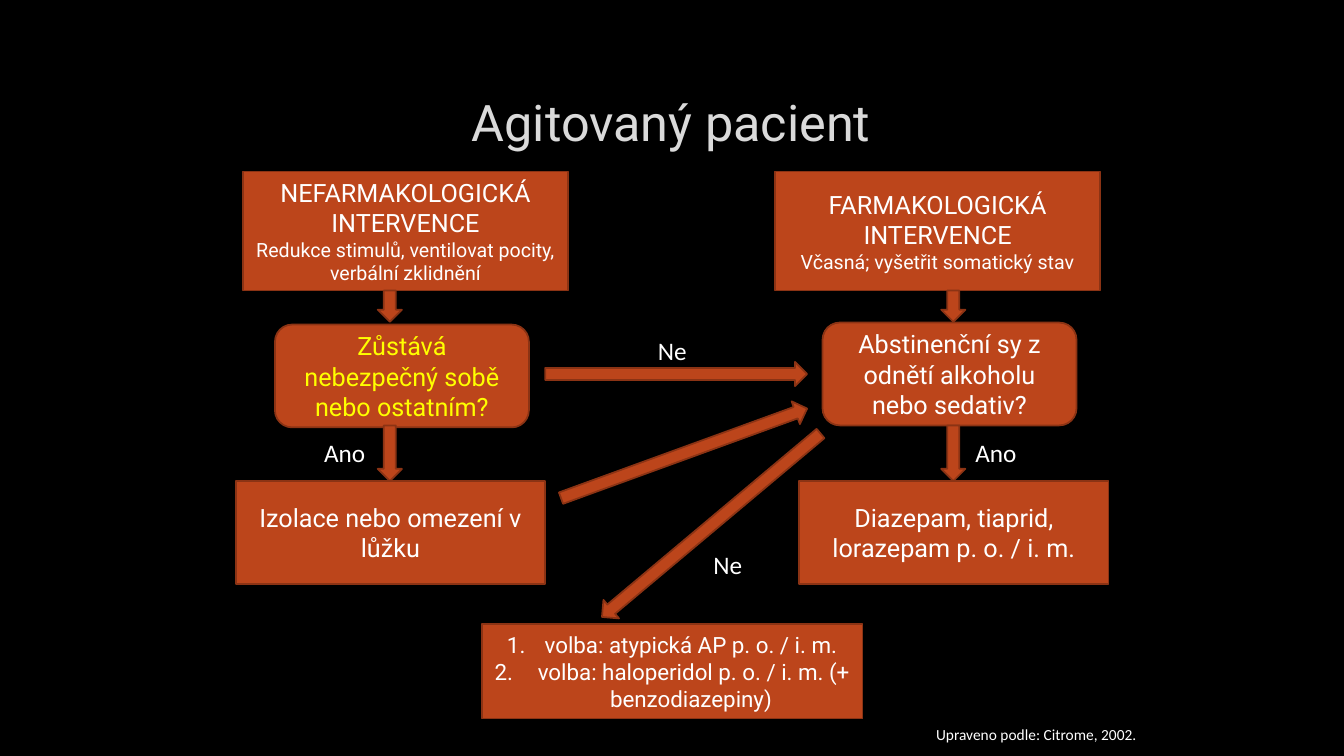
from lxml.etree import SubElement
from pptx import Presentation
from pptx.dml.color import RGBColor
from pptx.enum.shapes import MSO_SHAPE
from pptx.enum.text import MSO_ANCHOR, PP_ALIGN
from pptx.oxml import parse_xml
from pptx.oxml.ns import nsdecls, qn
from pptx.util import Cm, Pt

HUES = {
    "back": "000000",
    "fill": "BC451B",
    "edge": "8B3314",
    "text": "FFFFFF",
    "alert": "FFFF00",
    "title": "DADADA",
    "rim": "404040",
}
THICK = 0.61


def hue(name):
    """Return the named colour."""
    return RGBColor.from_string(HUES[name])


def write(para, text, size, tint="text", face="Roboto"):
    """Add one formatted run to a paragraph."""
    run = para.add_run()
    run.text = text
    run.font.size = Pt(size)
    run.font.name = face
    run.font.color.rgb = hue(tint)
    return run


def shape(slide, kind, box, turn=0):
    """Add a filled, outlined shape in a box given in centimetres."""
    form = slide.shapes.add_shape(kind, *map(Cm, box))
    form.shadow.inherit = False
    form.fill.solid()
    form.fill.fore_color.rgb = hue("fill")
    form.line.color.rgb = hue("edge")
    form.line.width = Pt(1.25)
    form.rotation = turn
    return form


def panel(slide, box, lines, kind=MSO_SHAPE.RECTANGLE, tint="text"):
    """Add a shape with centred lines of text and size."""
    frame = shape(slide, kind, box).text_frame
    frame.word_wrap = True
    frame.vertical_anchor = MSO_ANCHOR.MIDDLE
    for i, (text, size) in enumerate(lines):
        para = frame.add_paragraph() if i else frame.paragraphs[0]
        para.alignment = PP_ALIGN.CENTER
        write(para, text, size, tint)
    return frame


def label(slide, box, text, size=18):
    """Add a plain text label."""
    frame = slide.shapes.add_textbox(*map(Cm, box)).text_frame
    frame.word_wrap = True
    write(frame.paragraphs[0], text, size, face="Calibri")


def heading(slide, box):
    """Place and format the title."""
    title = slide.shapes.title
    title.left, title.top, title.width, title.height = map(Cm, box)
    frame = title.text_frame
    frame.vertical_anchor = MSO_ANCHOR.MIDDLE
    para = frame.paragraphs[0]
    para.alignment = PP_ALIGN.CENTER
    run = write(para, "Agitovaný pacient", 36, "title")
    rim = parse_xml(
        f'<a:ln {nsdecls("a")} w="9525"><a:solidFill><a:srgbClr val="{HUES["rim"]}">'
        '<a:alpha val="10000"/></a:srgbClr></a:solidFill></a:ln>'
    )
    run._r.get_or_add_rPr().insert(0, rim)


def branch(slide, box, shifts, intro, query, action, tint, side):
    """Draw a column of three steps, with its arrows and answer."""
    left, top, _, high = box
    first, second, third, shaft = (left + shift for shift in shifts)
    panel(slide, (first, top, 8.2, 3), intro)
    drop = 3.86 if side < 0 else 3.81
    panel(slide, (second, top + drop, 6.4, 2.59), [(query, 18)],
          MSO_SHAPE.ROUNDED_RECTANGLE, tint)
    panel(slide, (third, top + high - 2.59, 7.8, 2.59), [(action, 18)])
    for start, tall in ((3, 0.79), (6.4, 1.4)):
        shape(slide, MSO_SHAPE.DOWN_ARROW, (shaft, top + start, THICK, tall))
    answer = shaft - 1.6 if side < 0 else shaft + THICK
    label(slide, (answer, top + 6.58, 1.6, 1.02), "Ano")


def links(slide, box):
    """Draw the arrows and answers between the columns."""
    left, top, wide, _ = box
    shape(slide, MSO_SHAPE.RIGHT_ARROW, (left, top, wide, THICK))
    shape(slide, MSO_SHAPE.RIGHT_ARROW, (left + 0.2, top + 2, wide, THICK), -20)
    shape(slide, MSO_SHAPE.LEFT_ARROW, (left + 0.59, top + 3.81, 7.19, THICK), -40)
    for right, down in ((2.59, -0.79), (3.99, 4.6)):
        label(slide, (left + right, top + down, 2.21, 1.02), "Ne")


def choice(slide, box):
    """Draw the numbered list of drugs."""
    frame = panel(slide, box, [
        ("volba: atypická AP p. o. / i. m.", 16),
        (" volba: haloperidol p. o. / i. m. (+ benzodiazepiny)", 16),
    ])
    for para in frame.paragraphs:
        props = para._p.get_or_add_pPr()
        props.set("marL", str(Cm(0.95)))
        props.set("indent", str(-Cm(0.95)))
        SubElement(props, qn("a:buFont"), typeface="+mj-lt")
        SubElement(props, qn("a:buAutoNum"), type="arabicPeriod")


def main():
    """Build and save the slide."""
    deck = Presentation()
    deck.slide_width, deck.slide_height = Cm(33.87), Cm(19.05)
    slide = deck.slides.add_slide(deck.slide_layouts[5])
    slide.background.fill.solid()
    slide.background.fill.fore_color.rgb = hue("back")
    heading(slide, (2.54, 1.7, 28.75, 2.69))
    branch(
        slide, (5.94, 4.32, 8.4, 10.39), (0.18, 0.99, 0, 3.58),
        [("NEFARMAKOLOGICKÁ INTERVENCE", 18),
         ("Redukce stimulů, ventilovat pocity, verbální zklidnění", 14)],
        "Zůstává nebezpečný sobě nebo ostatním?",
        "Izolace nebo omezení v lůžku", "alert", -1)
    branch(
        slide, (19.53, 4.32, 8.4, 10.39), (0, 1.2, 0.61, 4.19),
        [("FARMAKOLOGICKÁ INTERVENCE", 18),
         ("Včasná; vyšetřit somatický stav", 14)],
        "Abstinenční sy z odnětí alkoholu nebo sedativ?",
        "Diazepam, tiaprid, lorazepam p. o. / i. m.", "text", 1)
    links(slide, (13.74, 9.12, 6.6, 6.4))
    choice(slide, (12.14, 15.72, 9.6, 2.39))
    label(slide, (23.34, 18.14, 5.79, 0.74), "Upraveno podle: Citrome, 2002.", 11)
    deck.save("out.pptx")


if __name__ == "__main__":
    main()
